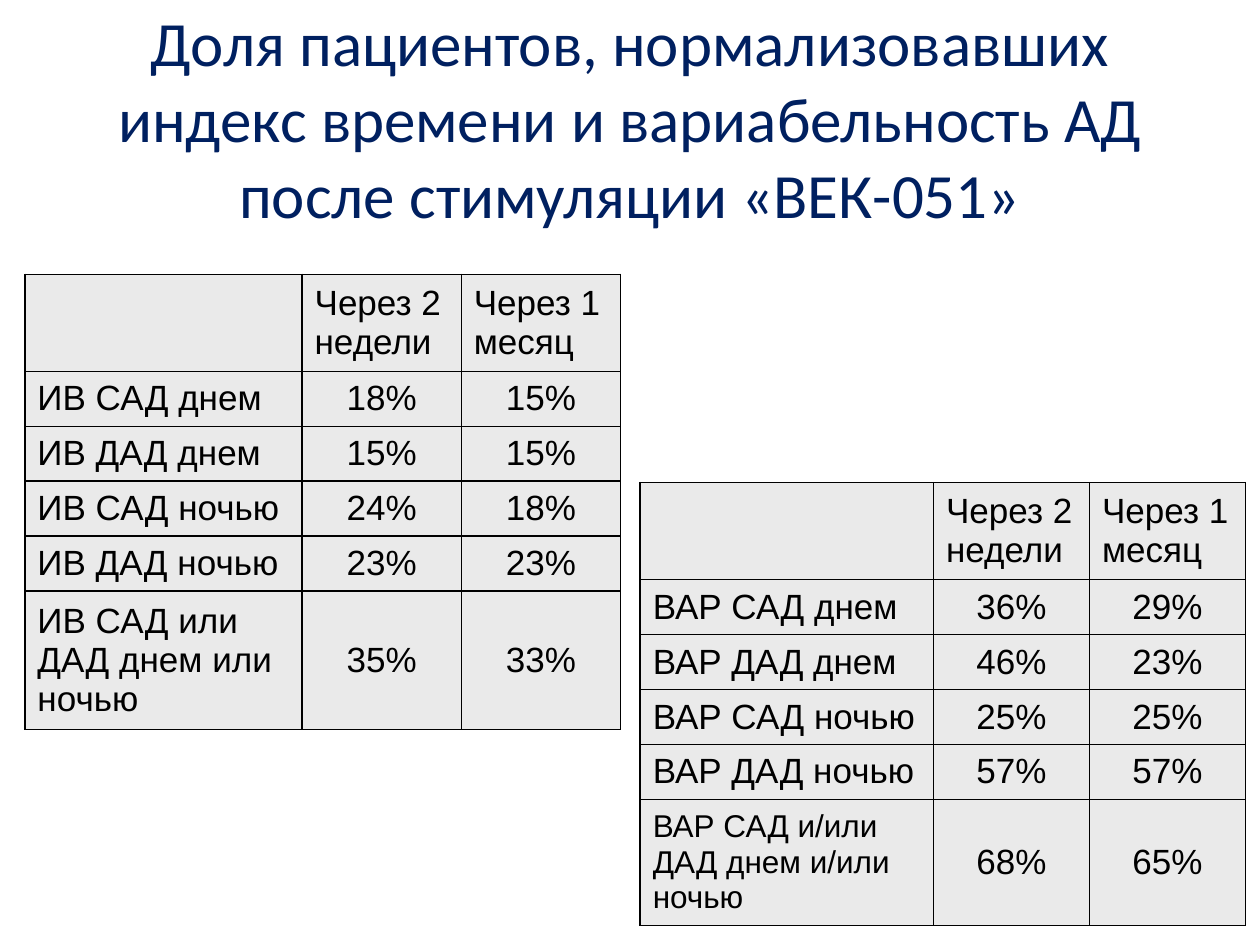
from pptx import Presentation
from pptx.dml.color import RGBColor
from pptx.enum.text import MSO_ANCHOR as Anchor, PP_ALIGN as Align
from pptx.oxml import parse_xml
from pptx.oxml.ns import nsdecls
from pptx.util import Pt

HEAD = ["", "Через 2 недели", "Через 1 месяц"]
INDEX = [
    HEAD,
    ["ИВ САД днем", "18%", "15%"],
    ["ИВ ДАД днем", "15%", "15%"],
    ["ИВ САД ночью", "24%", "18%"],
    ["ИВ ДАД ночью", "23%", "23%"],
    ["ИВ САД или ДАД днем или ночью", "35%", "33%"],
]
RANGE = [
    HEAD,
    ["ВАР САД днем", "36%", "29%"],
    ["ВАР ДАД днем", "46%", "23%"],
    ["ВАР САД ночью", "25%", "25%"],
    ["ВАР ДАД ночью", "57%", "57%"],
    ["ВАР САД и/или ДАД днем и/или ночью", "68%", "65%"],
]


def color(code):
    return RGBColor.from_string(code)


class Page:
    navy, ink, gray = "002060", "000000", "EAEAEA"

    def __init__(self, deck):
        self.slide = deck.slides.add_slide(deck.slide_layouts[5])

    def label(self, frame, text, align, tint, **font):
        para = frame.paragraphs[0]
        para.alignment = align
        run = para.add_run()
        run.text = text
        run.font.color.rgb = color(tint)
        for key, value in font.items():
            setattr(run.font, key, value)

    def title(self, text, left, top, width, height):
        shape = self.slide.shapes.title
        box = {"left": left, "top": top, "width": width, "height": height}
        for key, value in box.items():
            setattr(shape, key, Pt(value))
        frame = shape.text_frame
        frame.word_wrap = True
        frame.vertical_anchor = Anchor.MIDDLE
        self.label(frame, text, Align.CENTER, self.navy,
                   name="Calibri", size=Pt(36))

    def border(self, cell):
        props = cell._tc.get_or_add_tcPr()
        for place, side in enumerate(("lnL", "lnR", "lnT", "lnB")):
            props.insert(place, parse_xml(
                f'<a:{side} {nsdecls("a")} w="12700"><a:solidFill>'
                f'<a:srgbClr val="{self.ink}"/></a:solidFill></a:{side}>'))

    def table(self, data, left, top, cols, rows, last):
        """Draw data as a grid; last is the font size of the last row's label."""
        table = self.slide.shapes.add_table(
            len(rows), len(cols), Pt(left), Pt(top),
            Pt(sum(cols)), Pt(sum(rows))).table
        table.first_row = table.horz_banding = False
        for col, width in zip(table.columns, cols):
            col.width = Pt(width)
        for row, height in zip(table.rows, rows):
            row.height = Pt(height)
        for r, line in enumerate(data):
            for c, text in enumerate(line):
                cell = table.cell(r, c)
                cell.fill.solid()
                cell.fill.fore_color.rgb = color(self.gray)
                cell.vertical_anchor = Anchor.MIDDLE
                self.border(cell)
                if text:
                    align = Align.LEFT if r == 0 or c == 0 else Align.CENTER
                    size = last if c == 0 and r == len(rows) - 1 else 20
                    self.label(cell.text_frame, text, align, self.ink,
                               name="Arial", size=Pt(size))


def main():
    deck = Presentation()
    deck.slide_width, deck.slide_height = Pt(720), Pt(540)
    page = Page(deck)
    page.title("Доля пациентов, нормализовавших индекс времени и "
               "вариабельность АД после стимуляции «ВЕК-051»", 36, 0, 648, 134)
    rows = [55.4] + [31.4] * 4
    page.table(INDEX, 14.2, 156.8, [158.4, 91, 91], rows + [79.2], 20)
    page.table(RANGE, 365.8, 275.8, [167.6, 89.2, 89.2], rows + [72], 18)
    deck.save("out.pptx")


if __name__ == "__main__":
    main()
